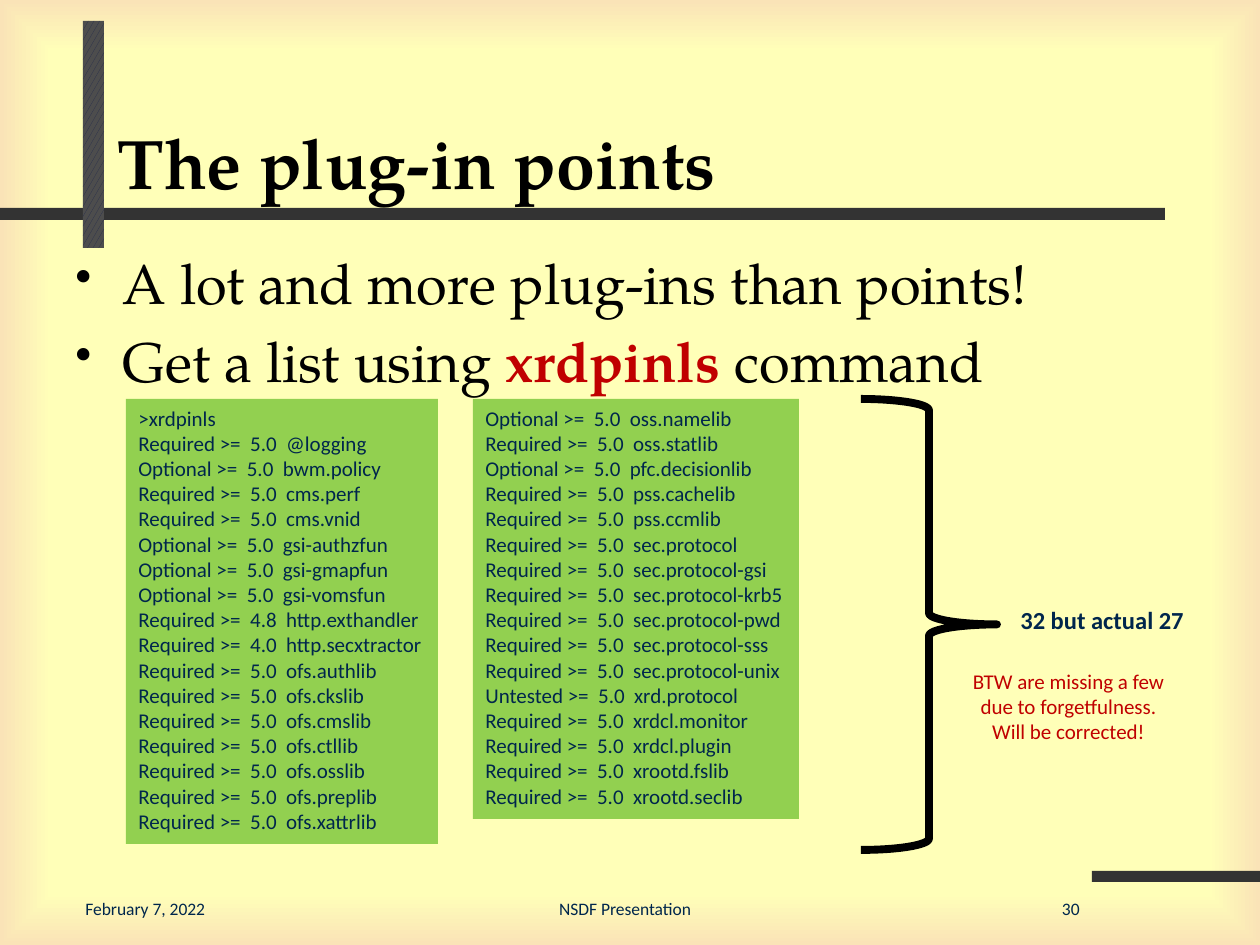
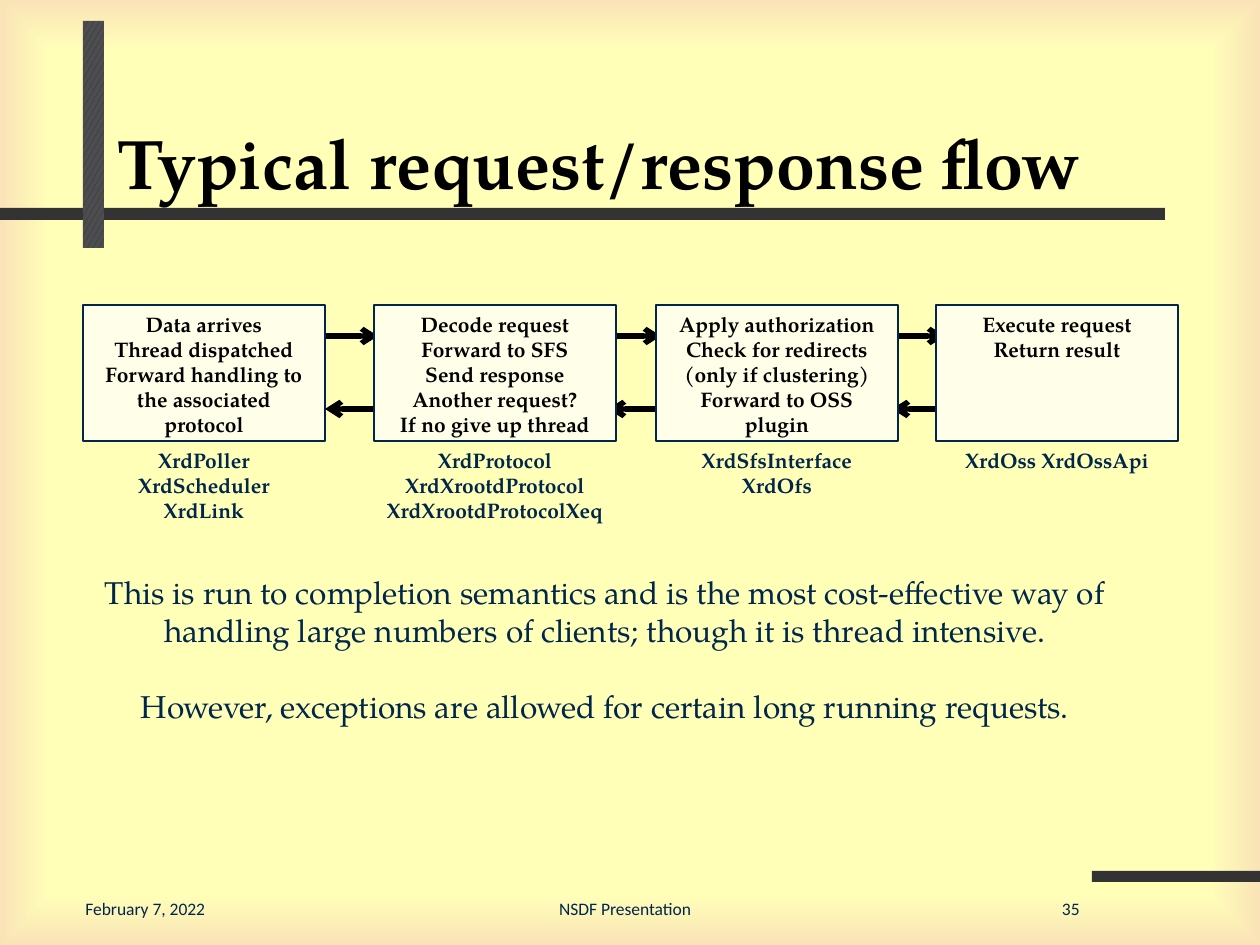
from lxml import etree
from pptx import Presentation
from pptx.dml.color import RGBColor
from pptx.enum.dml import MSO_PATTERN
from pptx.enum.shapes import MSO_CONNECTOR, MSO_SHAPE
from pptx.enum.text import MSO_ANCHOR, PP_ALIGN
from pptx.oxml import parse_xml
from pptx.oxml.ns import nsdecls, qn
from pptx.util import Pt

COLORS = {
    "paper": "FFFFB8", "edge": "FAE3B7", "bar": "333333",
    "confetti": "262D4C", "confetti_back": "4D4D4D",
    "navy": "00264C", "black": "000000", "red": "C00000",
    "green": "92D050", "step": "FFFFE9",
}
RGB = {name: RGBColor.from_string(value) for name, value in COLORS.items()}
SERIF, SANS = "TeX Gyre Pagella", "Calibri"
LEFT, CENTER, RIGHT = PP_ALIGN.LEFT, PP_ALIGN.CENTER, PP_ALIGN.RIGHT

BACKGROUND = f"""<p:bg {nsdecls("p", "a")}><p:bgPr>
<a:gradFill rotWithShape="1"><a:gsLst>
<a:gs pos="73000"><a:srgbClr val="{COLORS['paper']}"/></a:gs>
<a:gs pos="89000"><a:srgbClr val="{COLORS['paper']}"/></a:gs>
<a:gs pos="100000"><a:srgbClr val="{COLORS['edge']}"/></a:gs>
</a:gsLst><a:path path="shape">
<a:fillToRect l="50000" t="50000" r="50000" b="50000"/>
</a:path></a:gradFill><a:effectLst/></p:bgPr></p:bg>"""


def px(*lengths):
    """Turn lengths at 126 px to the inch into EMU."""
    return [round(length * 914400 / 126) for length in lengths]


def write(shape, lines, font, size, color, bold=False, align=LEFT, wrap=True):
    text_frame = shape.text_frame
    text_frame.text = "\n".join(lines)
    text_frame.word_wrap = wrap
    text_frame.vertical_anchor = MSO_ANCHOR.TOP
    for paragraph in text_frame.paragraphs:
        paragraph.alignment = align
        for run in paragraph.runs:
            run.font.name = font
            run.font.size = Pt(size)
            run.font.bold = bold
            run.font.color.rgb = RGB[color]
    return text_frame


presentation = Presentation()
presentation.slide_width, presentation.slide_height = px(1260, 945)

# What both slides share
slides = []
for title, number in (("The plug-in points", "30"),
                      ("Typical request/response flow", "35")):
    slide = presentation.slides.add_slide(presentation.slide_layouts[6])
    slides.append(slide)
    slide.element.cSld.insert(0, parse_xml(BACKGROUND))

    for box in ((0, 208, 1165, 12), (1092, 871, 168, 11), (83, 21, 21, 227)):
        bar = slide.shapes.add_shape(MSO_SHAPE.RECTANGLE, *px(*box))
        bar.shadow.inherit = False
        bar.line.fill.background()
        bar.fill.solid()
        bar.fill.fore_color.rgb = RGB["bar"]
    # The upright bar comes last
    bar.fill.patterned()
    bar.fill.pattern = MSO_PATTERN.LARGE_CONFETTI
    bar.fill.fore_color.rgb = RGB["confetti"]
    bar.fill.back_color.rgb = RGB["confetti_back"]

    for text, left, width, align in (("February 7, 2022", 73, 242, LEFT),
                                     (number, 976, 116, RIGHT),
                                     ("NSDF Presentation", 420, 410, CENTER)):
        footer = slide.shapes.add_textbox(*px(left, 892, width, 34))
        write(footer, [text], SANS, 10, "navy", align=align)

    title_box = slide.shapes.add_textbox(*px(105, 53, 1053, 157))
    write(title_box, [title], SERIF, 40, "black", bold=True)
    title_box.text_frame.vertical_anchor = MSO_ANCHOR.BOTTOM

plugin_slide, flow_slide = slides

# Plug-in points: bullets
body = plugin_slide.shapes.add_textbox(*px(63, 242, 1071, 179))
body.text_frame.word_wrap = True
bullets = (
    [("A lot and more plug-ins than points!", "black")],
    [("Get a list using ", "black"), ("xrdpinls", "red"), (" command", "black")],
)
for index, parts in enumerate(bullets):
    if index == 0:
        paragraph = body.text_frame.paragraphs[0]
    else:
        paragraph = body.text_frame.add_paragraph()
        paragraph.space_before = Pt(6.4)
    properties = paragraph._p.get_or_add_pPr()
    properties.set("marL", "342900")
    properties.set("indent", "-342900")
    etree.SubElement(properties, qn("a:buSzPct")).set("val", "85000")
    etree.SubElement(properties, qn("a:buChar")).set("char", "•")
    for text, color in parts:
        run = paragraph.add_run()
        run.text = text
        run.font.name = SERIF
        run.font.size = Pt(32)
        run.font.bold = color == "red"
        run.font.color.rgb = RGB[color]

# Plug-in points: command output in two columns
output_columns = (
    (126, 312, 445, [
        ">xrdpinls",
        "Required >=  5.0  @logging",
        "Optional >=  5.0  bwm.policy",
        "Required >=  5.0  cms.perf",
        "Required >=  5.0  cms.vnid",
        "Optional >=  5.0  gsi-authzfun",
        "Optional >=  5.0  gsi-gmapfun",
        "Optional >=  5.0  gsi-vomsfun",
        "Required >=  4.8  http.exthandler",
        "Required >=  4.0  http.secxtractor",
        "Required >=  5.0  ofs.authlib",
        "Required >=  5.0  ofs.ckslib",
        "Required >=  5.0  ofs.cmslib",
        "Required >=  5.0  ofs.ctllib",
        "Required >=  5.0  ofs.osslib",
        "Required >=  5.0  ofs.preplib",
        "Required >=  5.0  ofs.xattrlib",
    ]),
    (473, 326, 420, [
        "Optional >=  5.0  oss.namelib",
        "Required >=  5.0  oss.statlib",
        "Optional >=  5.0  pfc.decisionlib",
        "Required >=  5.0  pss.cachelib",
        "Required >=  5.0  pss.ccmlib",
        "Required >=  5.0  sec.protocol",
        "Required >=  5.0  sec.protocol-gsi",
        "Required >=  5.0  sec.protocol-krb5",
        "Required >=  5.0  sec.protocol-pwd",
        "Required >=  5.0  sec.protocol-sss",
        "Required >=  5.0  sec.protocol-unix",
        "Untested >=  5.0  xrd.protocol",
        "Required >=  5.0  xrdcl.monitor",
        "Required >=  5.0  xrdcl.plugin",
        "Required >=  5.0  xrootd.fslib",
        "Required >=  5.0  xrootd.seclib",
    ]),
)
for left, width, height, lines in output_columns:
    column = plugin_slide.shapes.add_shape(
        MSO_SHAPE.RECTANGLE, *px(left, 399, width, height))
    column.shadow.inherit = False
    column.fill.solid()
    column.fill.fore_color.rgb = RGB["green"]
    column.line.fill.background()
    write(column, lines, SANS, 12, "navy", wrap=False)

brace = plugin_slide.shapes.add_shape(
    MSO_SHAPE.RIGHT_BRACE, *px(861, 399, 136, 451))
brace.shadow.inherit = False
brace.fill.background()
brace.line.color.rgb = RGB["black"]
brace.line.width = Pt(4.5)

count = plugin_slide.shapes.add_textbox(*px(1008, 599, 190, 43))
write(count, ["32 but actual 27"], SANS, 14, "navy", bold=True, wrap=False)
remark = plugin_slide.shapes.add_textbox(*px(959, 662, 219, 89))
write(remark, ["BTW are missing a few", "due to forgetfulness.",
               "Will be corrected!"],
      SANS, 12, "red", align=CENTER, wrap=False)

# Request flow: arrows there and back, tucked under the step boxes
for start in (315, 598, 882):
    for begin, end, y in ((start, start + 63, 336),
                          (start + 73, start + 10, 409)):
        arrow = flow_slide.shapes.add_connector(
            MSO_CONNECTOR.STRAIGHT, *px(begin, y, end, y))
        arrow.line.color.rgb = RGB["black"]
        arrow.line.width = Pt(3)
        etree.SubElement(arrow.line._get_or_add_ln(),
                         qn("a:tailEnd")).set("type", "arrow")
        etree.SubElement(arrow._element.spPr, qn("a:effectLst"))

steps = (
    (83, ["Data arrives", "Thread dispatched",
          "Forward handling to the associated protocol"],
     ["XrdPoller", "XrdScheduler", "XrdLink"]),
    (374, ["Decode request", "Forward to SFS", "Send response",
           "Another request?", "If no give up thread"],
     ["XrdProtocol", "XrdXrootdProtocol", "XrdXrootdProtocolXeq"]),
    (656, ["Apply authorization", "Check for redirects",
           "(only if clustering)", "Forward to OSS plugin"],
     ["XrdSfsInterface", "XrdOfs"]),
    (936, ["Execute request", "Return result"], ["XrdOss XrdOssApi"]),
)
for left, actions, classes in steps:
    step = flow_slide.shapes.add_shape(
        MSO_SHAPE.RECTANGLE, *px(left, 305, 242, 136))
    step.shadow.inherit = False
    step.fill.solid()
    step.fill.fore_color.rgb = RGB["step"]
    step.line.color.rgb = RGB["navy"]
    step.line.width = Pt(1.5)
    write(step, actions, SERIF, 12, "black", bold=True, align=CENTER)
    label = flow_slide.shapes.add_textbox(
        *px(left, 441, 242, 13 + 25 * len(classes)))
    write(label, classes, SERIF, 12, "navy", bold=True, align=CENTER, wrap=False)

summary = flow_slide.shapes.add_textbox(*px(84, 567, 1042, 165))
summary_frame = write(summary, [
    "This is run to completion semantics and is the most cost-effective way of",
    "handling large numbers of clients; though it is thread intensive.",
    "However, exceptions are allowed for certain long running requests.",
], SERIF, 18, "navy", align=CENTER, wrap=False)
summary_frame.paragraphs[-1].space_before = Pt(22)

presentation.save("out.pptx")
